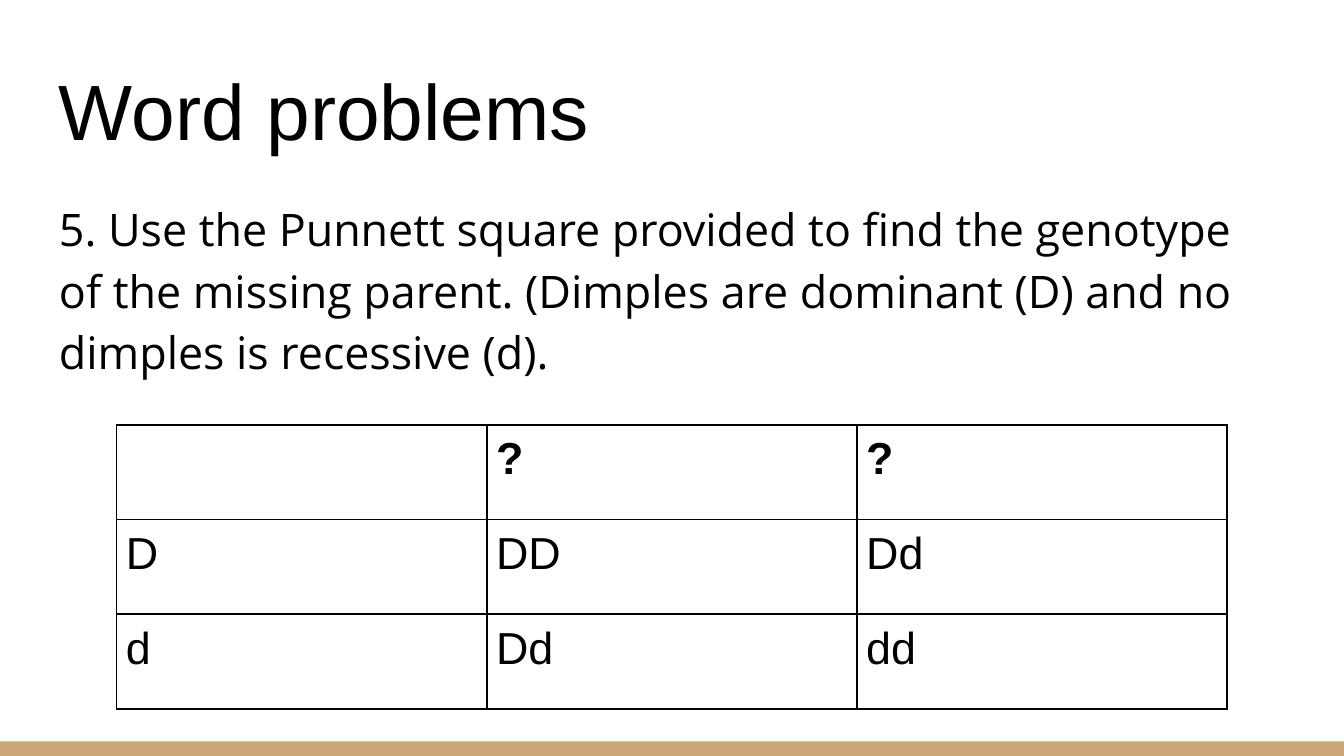
from lxml.etree import SubElement
from pptx import Presentation
from pptx.dml.color import RGBColor
from pptx.enum.shapes import MSO_SHAPE
from pptx.enum.text import MSO_ANCHOR
from pptx.oxml.ns import qn
from pptx.util import Pt

TITLE = "Word problems"
QUESTION = (
    "5. Use the Punnett square provided to find the genotype of the missing "
    "parent. (Dimples are dominant (D) and no dimples is recessive (d)."
)
PUNNETT_SQUARE = [
    ["", "?", "?"],
    ["D", "DD", "Dd"],
    ["d", "Dd", "dd"],
]

WIDTH, HEIGHT = 720, 405
BAR_HEIGHT = 7.8
TEXT_LEFT, TEXT_WIDTH = 24.5, 671
TABLE_LEFT, TABLE_TOP = 62.5, 227.7
COLUMN_WIDTH, ROW_HEIGHT = 198.3, 50.7
BLACK, WHITE, TAN = "000000", "FFFFFF", "CCA677"


def paint(fill, color):
    fill.solid()
    fill.fore_color.rgb = RGBColor.from_string(color)


def write(frame, text, size=24, font="Arial", bold=False, inset=7.2,
          anchor=MSO_ANCHOR.TOP, line_spacing=None, space_after=0):
    frame.word_wrap = True
    frame.vertical_anchor = anchor
    frame.margin_left = frame.margin_right = Pt(inset)
    frame.margin_top = frame.margin_bottom = Pt(inset)
    para = frame.paragraphs[0]
    para.line_spacing = line_spacing
    para.space_after = Pt(space_after)
    span = para.add_run()
    span.text = text
    span.font.size = Pt(size)
    span.font.name = font
    span.font.bold = bold
    span.font.color.rgb = RGBColor.from_string(BLACK)


def add_text(page, top, height, text, **style):
    box = page.shapes.add_textbox(Pt(TEXT_LEFT), Pt(top), Pt(TEXT_WIDTH), Pt(height))
    write(box.text_frame, text, **style)


def style_cell(cell):
    cell.margin_left = cell.margin_right = Pt(5)
    cell.margin_top = cell.margin_bottom = Pt(5)
    properties = cell._tc.get_or_add_tcPr()
    for side in ("lnL", "lnR", "lnT", "lnB"):
        line = SubElement(properties, qn(f"a:{side}"), w=str(Pt(1)))
        fill = SubElement(line, qn("a:solidFill"))
        SubElement(fill, qn("a:srgbClr"), val=BLACK)
    paint(cell.fill, WHITE)


def add_punnett_square(page):
    rows, columns = len(PUNNETT_SQUARE), len(PUNNETT_SQUARE[0])
    table = page.shapes.add_table(
        rows, columns, Pt(TABLE_LEFT), Pt(TABLE_TOP),
        Pt(columns * COLUMN_WIDTH), Pt(rows * ROW_HEIGHT)).table
    table.first_row = table.horz_banding = False
    for row, values in enumerate(PUNNETT_SQUARE):
        for column, value in enumerate(values):
            cell = table.cell(row, column)
            style_cell(cell)
            if value:
                write(cell.text_frame, value, bold=row == 0, inset=5)
                style_anchor = MSO_ANCHOR.TOP
                cell.vertical_anchor = style_anchor


def main():
    """Build the Punnett square word problem slide."""
    deck = Presentation()
    deck.slide_width, deck.slide_height = Pt(WIDTH), Pt(HEIGHT)
    page = deck.slides.add_slide(deck.slide_layouts[6])
    paint(page.background.fill, WHITE)
    bar = page.shapes.add_shape(
        MSO_SHAPE.RECTANGLE, 0, Pt(HEIGHT - BAR_HEIGHT), Pt(WIDTH), Pt(BAR_HEIGHT))
    bar.shadow.inherit = False
    paint(bar.fill, TAN)
    bar.line.fill.background()
    add_text(page, 25.2, 65.5, TITLE, size=42, anchor=MSO_ANCHOR.BOTTOM)
    add_text(page, 96.5, 264.2, QUESTION, font="Open Sans",
             line_spacing=1.15, space_after=16)
    add_punnett_square(page)
    deck.save("out.pptx")


if __name__ == "__main__":
    main()
